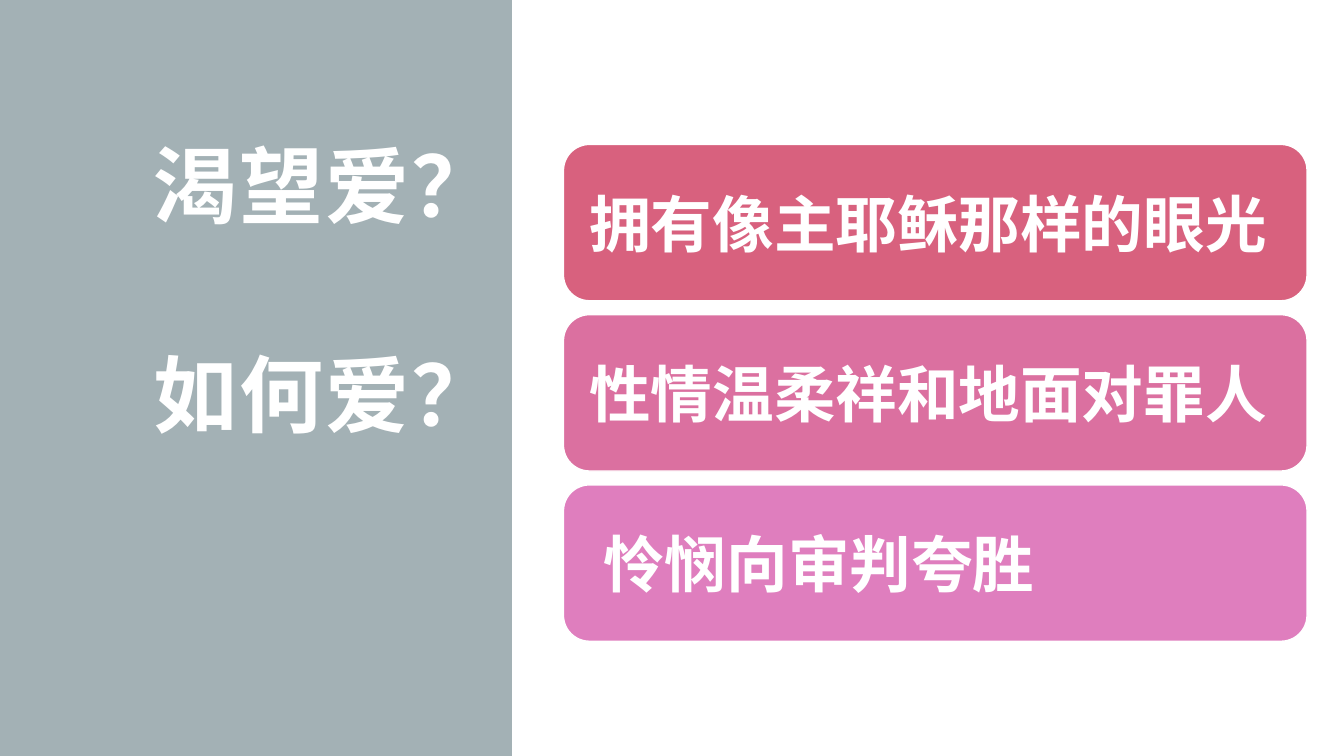
from lxml import etree
from pptx import Presentation
from pptx.dml.color import RGBColor
from pptx.enum.shapes import MSO_SHAPE
from pptx.enum.text import MSO_ANCHOR, MSO_AUTO_SIZE, PP_ALIGN
from pptx.oxml.ns import qn
from pptx.util import Cm, Pt

RECT, ROUNDED = MSO_SHAPE.RECTANGLE, MSO_SHAPE.ROUNDED_RECTANGLE
MIDDLE = MSO_ANCHOR.MIDDLE
LEFT, RIGHT = PP_ALIGN.LEFT, PP_ALIGN.RIGHT
NO_FIT = MSO_AUTO_SIZE.NONE
FONT = "Noto Sans CJK SC"
WHITE, GREY = "FFFFFF", "A3B1B5"
WIDTH, HEIGHT = 33.87, 19.05

QUESTIONS = ["渴望爱？", "如何爱？"]
ANSWERS = [
    ("拥有像主耶稣那样的眼光", "D8617E"),
    ("性情温柔祥和地面对罪人", "DB70A0"),
    (" 怜悯向审判夸胜", "DF7EBE"),
]


def rgb(value):
    return RGBColor.from_string(value)


def add_block(s, kind, box, fill):
    sp = s.shapes.add_shape(kind, *[Cm(v) for v in box])
    sp.shadow.inherit = False
    sp.fill.solid()
    sp.fill.fore_color.rgb = rgb(fill)
    sp.line.fill.background()
    return sp


def format_frame(tf, margins):
    values = {"word_wrap": True, "auto_size": NO_FIT, "vertical_anchor": MIDDLE}
    for side, value in zip(("left", "top", "right", "bottom"), margins):
        values["margin_" + side] = Cm(value)
    for name, value in values.items():
        setattr(tf, name, value)


def write(p, text, size, align, spacing=0):
    p.alignment = align
    r = p.add_run()
    r.text = text
    for name, value in {"name": FONT, "size": Pt(size), "bold": True}.items():
        setattr(r.font, name, value)
    r.font.color.rgb = rgb(WHITE)
    # East Asian typeface and letter spacing (hundredths of a point)
    rPr = r.font._element
    etree.SubElement(rPr, qn("a:ea")).set("typeface", FONT)
    rPr.set("spc", str(int(spacing * 100)))


def question_panel(s, left, top, width, height):
    panel = add_block(s, RECT, (left, top, width, height), GREY)
    # Keep the panel behind the title
    s.shapes._spTree.insert(2, panel._element)
    title = s.shapes.title
    box = {"left": left + 2.22, "top": top, "width": 8.45, "height": 14.35}
    for name, value in box.items():
        setattr(title, name, Cm(value))
    tf = title.text_frame
    format_frame(tf, (0.3, 0.3, 0.3, 0.25))
    for i, question in enumerate(QUESTIONS):
        p = tf.add_paragraph() if i else tf.paragraphs[0]
        p.line_spacing = 1.05
        p.space_before = Pt(74 if i else 0)
        write(p, question, 60, RIGHT, 1.5)


def answer_cards(s, left, top, width, height, gap=0.35):
    card_height = (height - gap * (len(ANSWERS) - 1)) / len(ANSWERS)
    for i, (answer, fill) in enumerate(ANSWERS):
        y = top + i * (card_height + gap)
        card = add_block(s, ROUNDED, (left, y, width, card_height), fill)
        card.line.color.rgb = rgb(WHITE)
        card.line.width = Pt(1)
        format_frame(card.text_frame, (0.46, 0.46, 0.46, 0.46))
        write(card.text_frame.paragraphs[0], answer, 44, LEFT)


def main():
    prs = Presentation()
    prs.slide_width, prs.slide_height = Cm(WIDTH), Cm(HEIGHT)
    s = prs.slides.add_slide(prs.slide_layouts[5])
    # Questions on the left, answers on the right
    question_panel(s, 0, 0, 12.9, HEIGHT)
    answer_cards(s, 14.2, 3.64, 18.74, 12.52)
    prs.save("out.pptx")


if __name__ == "__main__":
    main()
